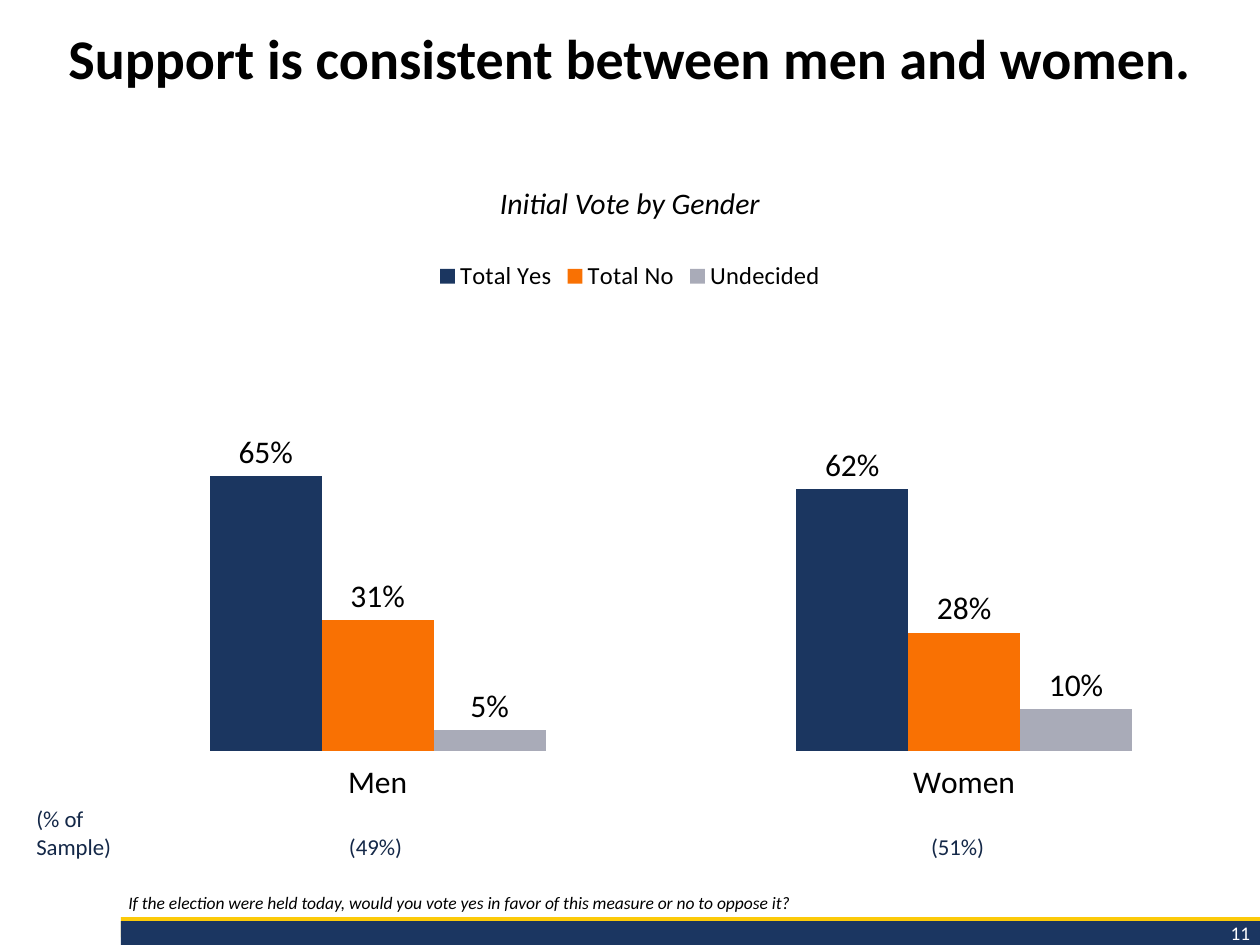
"""Build a slide with a column chart of the initial vote by gender."""
from lxml import etree
from pptx import Presentation
from pptx.chart.data import CategoryChartData
from pptx.dml.color import RGBColor
from pptx.enum.chart import XL_CHART_TYPE as CT, XL_LABEL_POSITION as LP
from pptx.enum.chart import XL_LEGEND_POSITION as LEG, XL_TICK_LABEL_POSITION as TL, XL_TICK_MARK as TM
from pptx.enum.shapes import MSO_SHAPE as SHAPE
from pptx.enum.text import MSO_ANCHOR as ANCHOR, PP_ALIGN as AL
from pptx.oxml.ns import qn
from pptx.util import Inches, Pt

W, H = 10, 7.5
BLACK, NAVY, INK = "000000", "1B3661", "142848"


def style(font, size, color, bold=False, italic=False):
    font.name, font.size = "Calibri", Pt(size)
    font.bold, font.italic = bold, italic
    font.color.rgb = RGBColor.from_string(color)


def add_text(box, text, size, color, align=AL.LEFT, anchor=ANCHOR.TOP, spacing=1.0, **look):
    tf = s.shapes.add_textbox(*map(Inches, box)).text_frame
    tf.word_wrap = True
    tf.vertical_anchor = anchor
    p = tf.paragraphs[0]
    p.text, p.alignment, p.line_spacing = text, align, spacing
    style(p.font, size, color, **look)


prs = Presentation()
prs.slide_width, prs.slide_height = Inches(W), Inches(H)
s = prs.slides.add_slide(prs.slide_layouts[6])

bar_left = 0.96
for top, height, color in ((7.28, 0.16, "FCCA09"), (7.31, 0.19, NAVY)):
    sp = s.shapes.add_shape(SHAPE.RECTANGLE, *map(Inches, (bar_left, top, W - bar_left, height)))
    sp.shadow.inherit = False
    sp.fill.solid()
    sp.fill.fore_color.rgb = RGBColor.from_string(color)
    sp.line.fill.background()

add_text((8.54, 7.26, 1.48, 0.29), "11", 11, "FFFFFF", AL.RIGHT)
add_text((0, 0.2, W, 1.22), "Support is consistent between men and women.", 32, BLACK,
         AL.CENTER, spacing=0.9, bold=True)
add_text((0.92, 6.76, 9.06, 0.54),
         "If the election were held today, would you vote yes in favor of this measure or no to oppose it?",
         10, BLACK, anchor=ANCHOR.BOTTOM, spacing=0.9, italic=True)
add_text((0, 1.42, W, 0.39), "Initial Vote by Gender", 17, BLACK, AL.CENTER, italic=True)

series = (("Total Yes", (0.65, 0.62), "1B3660"),
          ("Total No", (0.31, 0.28), "F97103"),
          ("Undecided", (0.05, 0.1), "A9ABB8"))
data = CategoryChartData(number_format="0%")
data.categories = ["Men", "Women"]
for name, values, color in series:
    data.add_series(name, values)
chart = s.shapes.add_chart(CT.COLUMN_CLUSTERED, *map(Inches, (0, 1.96, W, 4.5)), data).chart
style(chart.font, 10, "10203A")
chart.has_title = False
chart.has_legend = True
chart.legend.position = LEG.TOP
chart.legend.include_in_layout = False
style(chart.legend.font, 14, BLACK)

cat, val = chart.category_axis, chart.value_axis
cat.major_tick_mark = cat.minor_tick_mark = TM.NONE
cat.tick_label_position = TL.LOW
cat.format.line.fill.background()
style(cat.tick_labels.font, 18, BLACK)
val.minimum_scale, val.maximum_scale, val.major_unit = 0, 1, 0.2
val.has_major_gridlines = False
val.visible = False

plot = chart.plots[0]
plot.gap_width, plot.overlap, plot.vary_by_categories = 224, 0, False
for ser, (name, values, color) in zip(plot.series, series):
    ser.format.fill.solid()
    ser.format.fill.fore_color.rgb = RGBColor.from_string(color)
    labels = ser.data_labels
    labels.show_value = True
    labels.position = LP.OUTSIDE_END
    labels.number_format, labels.number_format_is_linked = "0%", False
    style(labels.font, 18, BLACK)

area = chart.plots[0]._element.getparent()
for old in area.findall(qn("c:layout")):
    area.remove(old)
layout = etree.Element(qn("c:layout"))
area.insert(0, layout)
manual = etree.SubElement(layout, qn("c:manualLayout"))
for tag, value in (("layoutTarget", "inner"), ("xMode", "edge"), ("yMode", "edge"),
                   ("x", "0.067"), ("y", "0.143"), ("w", "0.931"), ("h", "0.747")):
    etree.SubElement(manual, qn("c:" + tag)).set("val", value)

for left, top, text, align in ((0.19, 6.34, "(% of Sample)", AL.LEFT),
                               (2.46, 6.56, "(49%)", AL.CENTER),
                               (7.08, 6.56, "(51%)", AL.CENTER)):
    add_text((left, top, 1.04, 6.88 - top), text, 13, INK, align)

prs.save("out.pptx")
